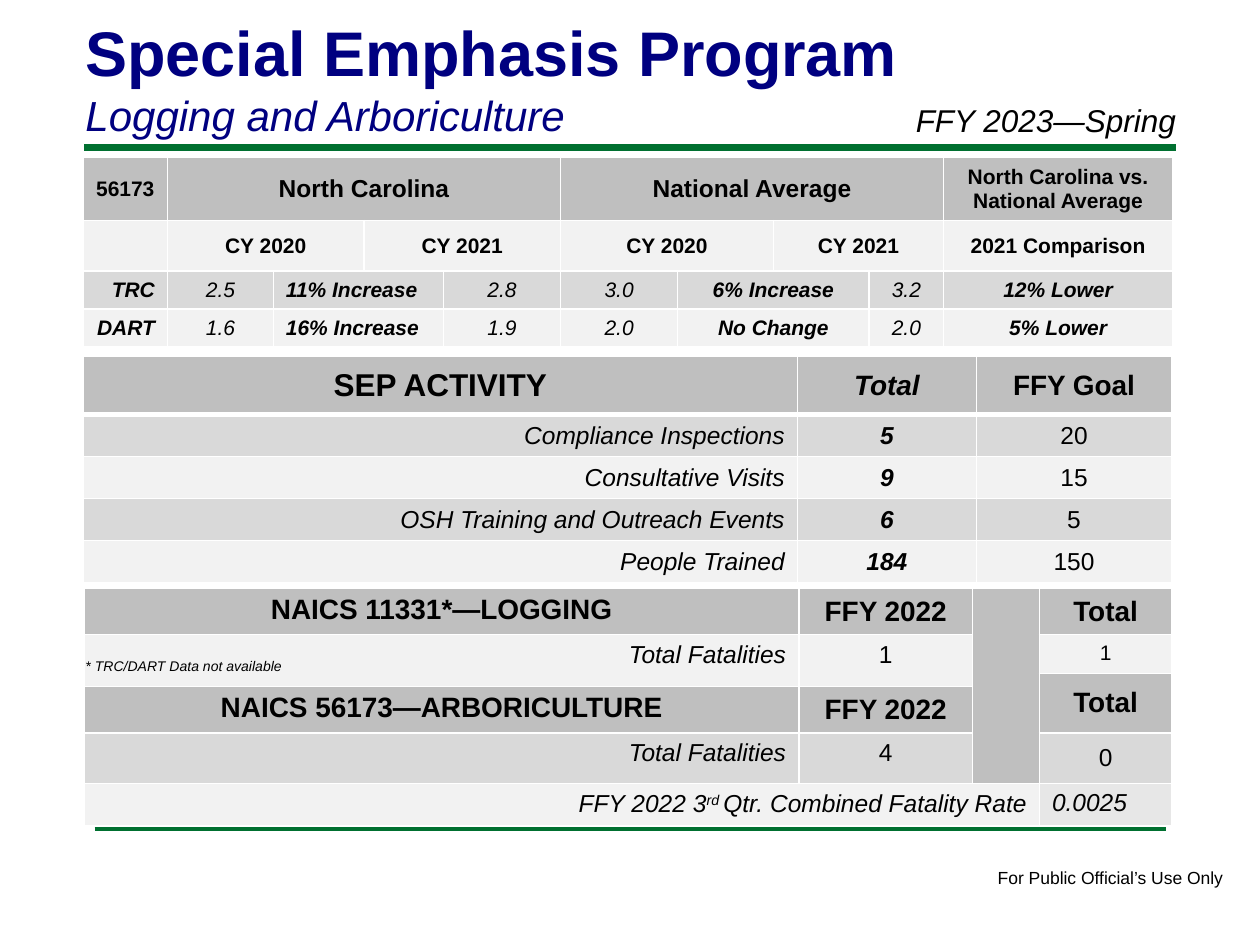
from lxml import etree
from pptx import Presentation
from pptx.dml.color import RGBColor
from pptx.enum.shapes import MSO_CONNECTOR
from pptx.enum.text import MSO_ANCHOR, PP_ALIGN
from pptx.oxml.ns import qn
from pptx.util import Inches, Pt

LEFT, CENTER, RIGHT = PP_ALIGN.LEFT, PP_ALIGN.CENTER, PP_ALIGN.RIGHT
TOP, MIDDLE = MSO_ANCHOR.TOP, MSO_ANCHOR.MIDDLE
STRAIGHT = MSO_CONNECTOR.STRAIGHT

COLORS = {
    "green": "007030", "navy": "000080", "black": "000000", "white": "FFFFFF",
    "head": "BFBFBF", "dark": "D9D9D9", "light": "F2F2F2", "rate": "E7E7E7",
}


def style(size, bold=False, italic=False, align=CENTER, anchor=MIDDLE):
    return {"font": {"size": Pt(size), "bold": bold, "italic": italic, "name": "Arial"},
            "align": align, "anchor": anchor}


STYLES = {
    "title": style(36, bold=True, align=LEFT),
    "subtitle": style(24, italic=True, align=LEFT),
    "period": style(18, italic=True, align=LEFT),
    "footer": style(10, align=LEFT),
    "note": style(8, italic=True, align=LEFT),
    # Injury rates
    "region": style(14, bold=True),
    "year": style(12, bold=True),
    "measure": style(12, bold=True, italic=True, align=RIGHT),
    "rate": style(12, italic=True),
    "change": style(12, bold=True, italic=True),
    "change left": style(12, bold=True, italic=True, align=LEFT),
    # Activity and fatalities
    "section": style(18, bold=True),
    "head": style(16, bold=True),
    "head top": style(16, bold=True, anchor=TOP),
    "head italic": style(16, bold=True, italic=True),
    "label": style(14, italic=True, align=RIGHT),
    "label top": style(14, italic=True, align=RIGHT, anchor=TOP),
    "total": style(14, bold=True, italic=True),
    "number": style(14),
    "number top": style(14, anchor=TOP),
    "small number": style(12, anchor=TOP),
    "combined": style(14, italic=True, align=LEFT, anchor=TOP),
}


def rgb(color):
    return RGBColor.from_string(COLORS[color])


def write(para, text, look, color="black"):
    """Text is a string, or a list of (text, baseline in thousandths) spans."""
    para.alignment = look["align"]
    for words, baseline in [(text, 0)] if isinstance(text, str) else text:
        span = para.add_run()
        span.text = words
        for name, value in look["font"].items():
            setattr(span.font, name, value)
        span.font.color.rgb = rgb(color)
        if baseline:
            span.font._element.set("baseline", str(baseline))


def add_text(page, place, lines, color="black", wrap=True):
    box = page.shapes.add_textbox(*map(Inches, place))
    frame = box.text_frame
    frame.word_wrap = wrap
    for number, (text, name) in enumerate(lines):
        para = frame.add_paragraph() if number else frame.paragraphs[0]
        write(para, text, STYLES[name], color)


def add_rule(page, left, right, y, width):
    rule = page.shapes.add_connector(
        STRAIGHT, Inches(left), Inches(y), Inches(right), Inches(y))
    rule.line.color.rgb = rgb("green")
    rule.line.width = Pt(width)
    etree.SubElement(rule._element.spPr, qn("a:effectLst"))


def set_borders(cell, widths):
    properties = cell._tc.get_or_add_tcPr()
    for side in ("lnL", "lnR", "lnT", "lnB"):
        line = etree.SubElement(properties, qn(f"a:{side}"), w=str(Pt(widths.get(side, 1))))
        fill = etree.SubElement(line, qn("a:solidFill"))
        etree.SubElement(fill, qn("a:srgbClr"), val=COLORS["white"])


def add_table(page, left, top, widths, heights, cells, fills, spans=(),
              special_fills=None, thick_rule=False):
    """Cells map (row, column) to (text, style); spans are corner pairs."""
    frame = page.shapes.add_table(
        len(heights), len(widths), Inches(left), Inches(top),
        Inches(sum(widths)), Inches(sum(heights)))
    table = frame.table
    table.first_row = table.horz_banding = False
    for column, width in zip(table.columns, widths):
        column.width = Inches(width)
    for row, height in zip(table.rows, heights):
        row.height = Inches(height)
    for start, end in spans:
        table.cell(*start).merge(table.cell(*end))
    for row, row_fill in enumerate(fills):
        edge = {0: {"lnB": 3}, 1: {"lnT": 3}}.get(row, {}) if thick_rule else {}
        for col in range(len(widths)):
            cell = table.cell(row, col)
            set_borders(cell, edge)
            cell.fill.solid()
            cell.fill.fore_color.rgb = rgb((special_fills or {}).get((row, col), row_fill))
            if (row, col) in cells:
                text, name = cells[row, col]
                cell.vertical_anchor = STYLES[name]["anchor"]
                write(cell.text_frame.paragraphs[0], text, STYLES[name])


def add_rates(page):
    cells = {
        (0, 0): ("56173", "year"),
        (0, 1): ("North Carolina", "region"),
        (0, 5): ("National Average", "region"),
        (0, 9): ("North Carolina vs. National Average", "year"),
        (1, 9): ("2021 Comparison", "year"),
    }
    spans = [((0, 1), (0, 4)), ((0, 5), (0, 8))]
    for col, year in zip((1, 3, 5, 7), ("CY 2020", "CY 2021") * 2):
        cells[1, col] = (year, "year")
        spans.append(((1, col), (1, col + 1)))
    columns = (0, 1, 2, 4, 5, 6, 8, 9)
    names = ("measure", "rate", "change left", "rate", "rate", "change", "rate", "change")
    records = [
        ("TRC", "2.5", "11% Increase", "2.8", "3.0", "6% Increase", "3.2", "12% Lower"),
        ("DART", "1.6", "16% Increase", "1.9", "2.0", "No Change", "2.0", "5% Lower"),
    ]
    for row, record in enumerate(records, 2):
        cells.update({(row, col): item for col, item in zip(columns, zip(record, names))})
        spans += [((row, col), (row, col + 1)) for col in (2, 6)]
    add_table(page, 0.66, 1.25,
              [0.67, 0.84, 0.72, 0.63, 0.93, 0.93, 0.76, 0.76, 0.59, 1.82],
              [0.5, 0.4, 0.3, 0.3], cells, ["head", "light", "dark", "light"], spans)


def add_activity(page):
    cells = {(0, 0): ("SEP ACTIVITY", "section"), (0, 1): ("Total", "head italic"),
             (0, 2): ("FFY Goal", "head")}
    records = [
        ("Compliance Inspections", "5", "20"),
        ("Consultative Visits", "9", "15"),
        ("OSH Training and Outreach Events", "6", "5"),
        ("People Trained", "184", "150"),
    ]
    for row, record in enumerate(records, 1):
        for col, item in enumerate(zip(record, ("label", "total", "number"))):
            cells[row, col] = item
    add_table(page, 0.66, 2.83, [5.67, 1.42, 1.55], [0.46] + [0.33] * 4, cells,
              ["head"] + ["dark", "light"] * 2, thick_rule=True)


def add_fatalities(page):
    cells = {
        (1, 3): ("1", "small number"),
        (2, 3): ("Total", "head"),
        (4, 3): ("0", "number"),
        (0, 3): ("Total", "head"),
        (5, 0): ([("FFY 2022 3", 0), ("rd ", 30000),
                  ("Qtr. Combined Fatality Rate", 0)], "label"),
        (5, 3): ("0.0025", "combined"),
    }
    for row, industry, count in ((0, "NAICS 11331*—LOGGING", "1"),
                                 (3, "NAICS 56173—ARBORICULTURE", "4")):
        cells[row, 0] = (industry, "head top")
        cells[row, 1] = ("FFY 2022", "head")
        cells[row + 1, 0] = ("Total Fatalities", "label top")
        cells[row + 1, 1] = (count, "number top")
    spans = [((0, 2), (4, 2)), ((1, 0), (2, 0)), ((1, 1), (2, 1)),
             ((2, 3), (3, 3)), ((5, 0), (5, 2))]
    special = {(row, 2): "head" for row in range(5)}
    special.update({(2, 3): "head", (5, 3): "rate"})
    add_table(page, 0.67, 4.67, [5.67, 1.38, 0.53, 1.05],
              [0.36, 0.31, 0.1, 0.37, 0.37, 0.33], cells,
              ["head", "light", "light", "head", "dark", "light"], spans, special)


def main():
    deck = Presentation()
    deck.slide_width, deck.slide_height = Inches(10), Inches(7.5)
    page = deck.slides.add_slide(deck.slide_layouts[6])

    # Rules and footer
    add_rule(page, 0.67, 9.33, 1.17, 4)
    add_rule(page, 0.75, 9.25, 6.58, 2)
    add_text(page, (7.82, 6.83, 2.01, 0.27),
             [("For Public Official’s Use Only", "footer")], wrap=False)

    # Heading
    add_text(page, (0.58, 0.06, 8.25, 1.11),
             [("Special Emphasis Program", "title"),
              ("Logging and Arboriculture", "subtitle")], "navy")

    # Tables
    add_activity(page)
    add_fatalities(page)
    add_text(page, (0.58, 5.17, 1.78, 0.24),
             [("* TRC/DART Data not available", "note")], wrap=False)
    add_rates(page)

    # Reporting period
    add_text(page, (7.17, 0.75, 2.5, 0.4), [("FFY 2023—Spring", "period")])
    deck.save("out.pptx")


if __name__ == "__main__":
    main()
